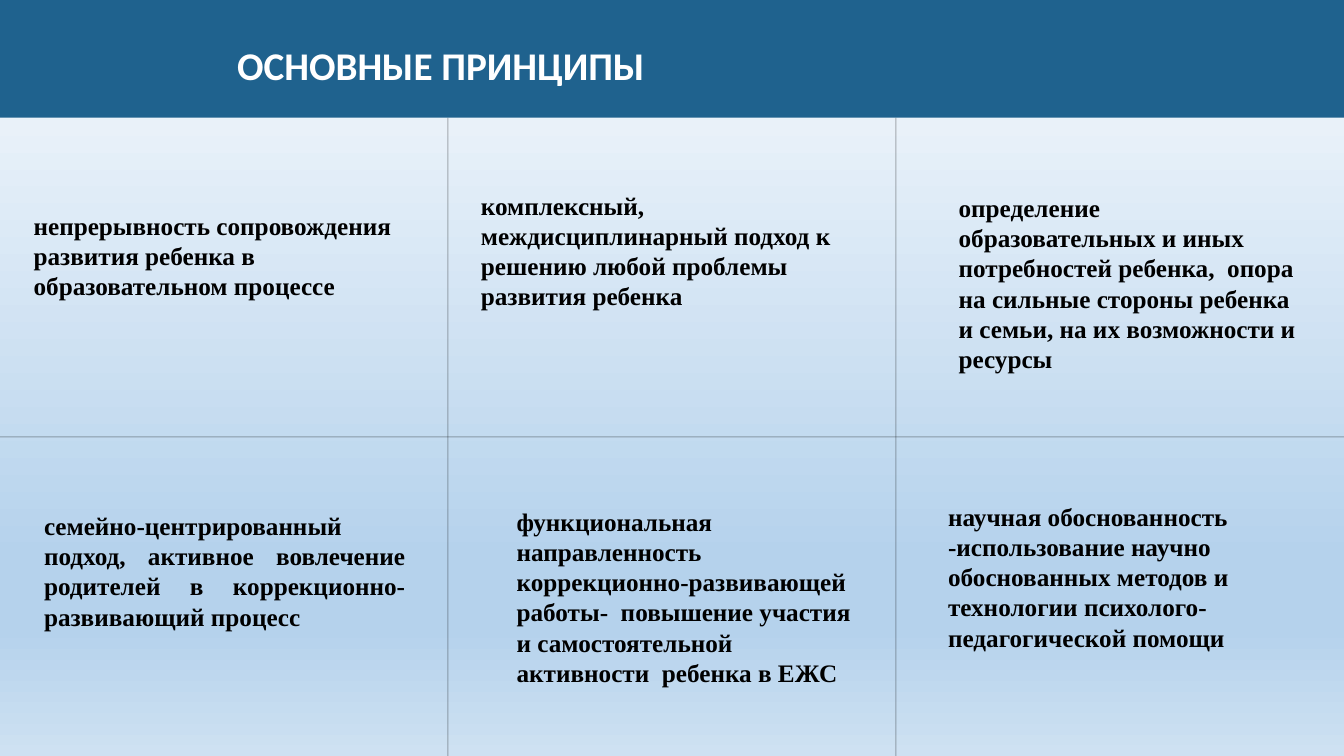
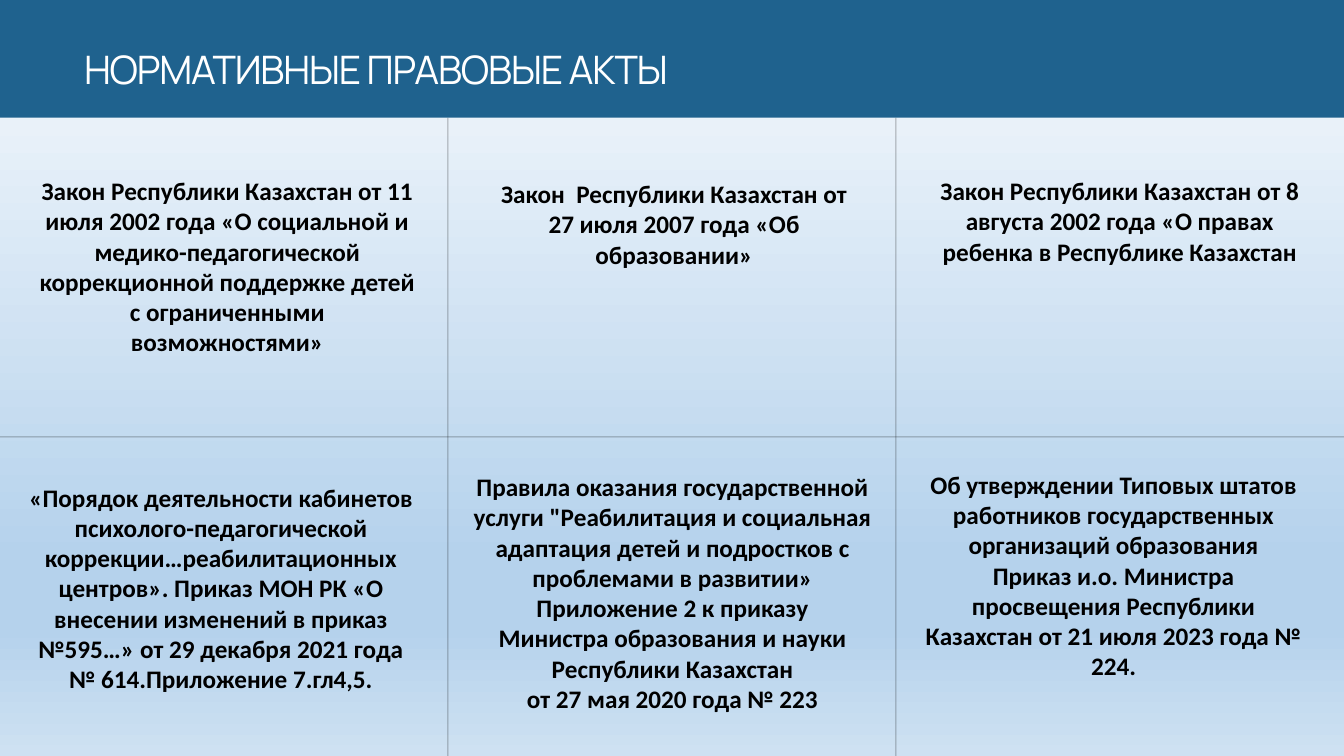
from lxml import etree
from pptx import Presentation
from pptx import util as u
from pptx.dml.color import RGBColor
from pptx.enum import shapes, text
from pptx.oxml.ns import qn

PX = 9525
WIDTH, HEIGHT = 1280, 720
BAND_HEIGHT = 112
COLUMNS, ROWS = 3, 2
COLORS = {"band": "1F628E", "title": "FFFFFF", "ink": "000000"}
BACKGROUND = [(0, "F7FAFD"), (74, "B5D2EC"), (83, "B5D2EC"), (100, "CEE1F2")]
TITLE_BOX = (80, 39, 688, 45)
LEFT, CENTER, JUSTIFY = (text.PP_ALIGN.LEFT, text.PP_ALIGN.CENTER,
                         text.PP_ALIGN.JUSTIFY)

PRINCIPLES = [
    ((32, 200, 356, 87), LEFT,
     "непрерывность сопровождения развития ребенка в образовательном процессе"),
    ((458, 181, 356, 116), LEFT,
     "комплексный, междисциплинарный подход к решению любой проблемы "
     "развития ребенка"),
    ((913, 183, 325, 175), LEFT,
     "определение образовательных и иных потребностей ребенка,  опора на "
     "сильные стороны ребенка и семьи, на их возможности и ресурсы"),
    ((42, 486, 344, 116), JUSTIFY,
     "семейно-центрированный подход, активное вовлечение родителей в "
     "коррекционно-развивающий процесс"),
    ((492, 482, 329, 175), LEFT,
     "функциональная направленность коррекционно-развивающей работы-  "
     "повышение участия и самостоятельной активности  ребенка в ЕЖС"),
    ((903, 477, 344, 146), LEFT,
     "научная обоснованность -использование научно обоснованных методов и "
     "технологии психолого-педагогической помощи"),
]

ACTS = [
    ((31, 167, 371, 175), CENTER,
     "Закон Республики Казахстан от 11 июля 2002 года «О социальной и "
     "медико-педагогической коррекционной поддержке детей с ограниченными "
     "возможностями»"),
    ((468, 170, 348, 87), CENTER,
     "Закон  Республики Казахстан от 27 июля 2007 года «Об образовании»"),
    ((880, 167, 373, 87), CENTER,
     "Закон Республики Казахстан от 8 августа 2002 года «О правах ребенка "
     "в Республике Казахстан"),
    ((25, 459, 371, 204), CENTER,
     "«Порядок деятельности кабинетов психолого-педагогической "
     "коррекции…реабилитационных центров». Приказ МОН РК «О внесении "
     "изменений в приказ №595…» от 29 декабря 2021 года "
     "№ 614.Приложение 7.гл4,5."),
    ((450, 449, 381, 232), CENTER,
     "Правила оказания государственной услуги \"Реабилитация и социальная "
     "адаптация детей и подростков с проблемами в развитии» "
     "Приложение 2 к приказу\vМинистра образования и науки\v"
     "Республики Казахстан\vот 27 мая 2020 года № 223"),
    ((876, 447, 369, 204), CENTER,
     "Об утверждении Типовых штатов работников государственных организаций "
     "образования\nПриказ и.о. Министра просвещения Республики Казахстан "
     "от 21 июля 2023 года № 224."),
]


def px(*lengths):
    return [u.Emu(round(n * PX)) for n in lengths]


def rgb(name):
    return RGBColor.from_string(COLORS[name])


def set_background(master):
    """Give the master, and so every slide, the vertical gradient."""
    master.background.fill.gradient()
    grad = master.element.find(".//" + qn("a:gradFill"))
    stops = grad.find(qn("a:gsLst"))
    for stop in list(stops):
        stops.remove(stop)
    for percent, color in BACKGROUND:
        stop = etree.SubElement(stops, qn("a:gs"), pos=str(percent * 1000))
        etree.SubElement(stop, qn("a:srgbClr"), val=color)
    grad.find(qn("a:lin")).set("ang", "5400000")


def add_rule(s, *ends):
    """Draw a thin, mostly transparent line between two points."""
    c = s.shapes.add_connector(shapes.MSO_CONNECTOR.STRAIGHT, *px(*ends))
    c.line.width = u.Pt(0.75)
    c.line.color.rgb = rgb("ink")
    color = c.element.spPr.find(".//" + qn("a:srgbClr"))
    etree.SubElement(color, qn("a:alpha"), val="30000")
    etree.SubElement(c.element.spPr, qn("a:effectLst"))


def add_grid(s):
    for row in range(1, ROWS):
        y = BAND_HEIGHT + (HEIGHT - BAND_HEIGHT) * row / ROWS
        add_rule(s, 0, y, WIDTH, y)
    for column in range(1, COLUMNS):
        x = WIDTH * column / COLUMNS
        add_rule(s, x, BAND_HEIGHT, x, HEIGHT)


def add_band(s):
    band = s.shapes.add_shape(shapes.MSO_SHAPE.RECTANGLE,
                              *px(0, 0, WIDTH, BAND_HEIGHT))
    band.shadow.inherit = False
    band.fill.solid()
    band.fill.fore_color.rgb = rgb("band")
    band.line.fill.background()


def fill_text(sp, words, align, color, **font):
    """Write the words in a frame without margins, in one format."""
    tf = sp.text_frame
    frame = dict(margin_left=0, margin_top=0, margin_right=0, margin_bottom=0,
                 word_wrap=True, vertical_anchor=text.MSO_ANCHOR.TOP,
                 auto_size=text.MSO_AUTO_SIZE.SHAPE_TO_FIT_TEXT)
    for name, value in frame.items():
        setattr(tf, name, value)
    tf.text = words
    for p in tf.paragraphs:
        p.alignment = align
        for r in p.runs:
            r.font.color.rgb = rgb(color)
            for name, value in font.items():
                setattr(r.font, name, value)


def set_title(s, words, align, **font):
    title = s.shapes.title
    title.left, title.top, title.width, title.height = px(*TITLE_BOX)
    fill_text(title, words, align, "title", size=u.Pt(28), **font)
    s.shapes.element.append(title.element)  # in front of the band
    return title.text_frame.paragraphs[0]


def add_cell_texts(s, cells, font_name):
    for box, align, words in cells:
        sp = s.shapes.add_textbox(*px(*box))
        fill_text(sp, words, align, "ink",
                  size=u.Pt(18), name=font_name, bold=True)


def add_grid_slide(prs):
    s = prs.slides.add_slide(prs.slide_layouts.get_by_name("Title Only"))
    add_grid(s)
    add_band(s)
    return s


def main():
    prs = Presentation()
    prs.slide_width, prs.slide_height = px(WIDTH, HEIGHT)
    set_background(prs.slide_master)

    s = add_grid_slide(prs)
    set_title(s, "ОСНОВНЫЕ ПРИНЦИПЫ ", CENTER, name="Calibri", bold=True)
    add_cell_texts(s, PRINCIPLES, "Times New Roman")

    s = add_grid_slide(prs)
    p = set_title(s, "НОРМАТИВНЫЕ ПРАВОВЫЕ АКТЫ", LEFT, name="Manrope")
    p.line_spacing = u.Pt(36.4)
    p.runs[0].font._element.set("spc", "-80")
    add_cell_texts(s, ACTS, "Calibri")

    prs.save("out.pptx")


if __name__ == "__main__":
    main()
